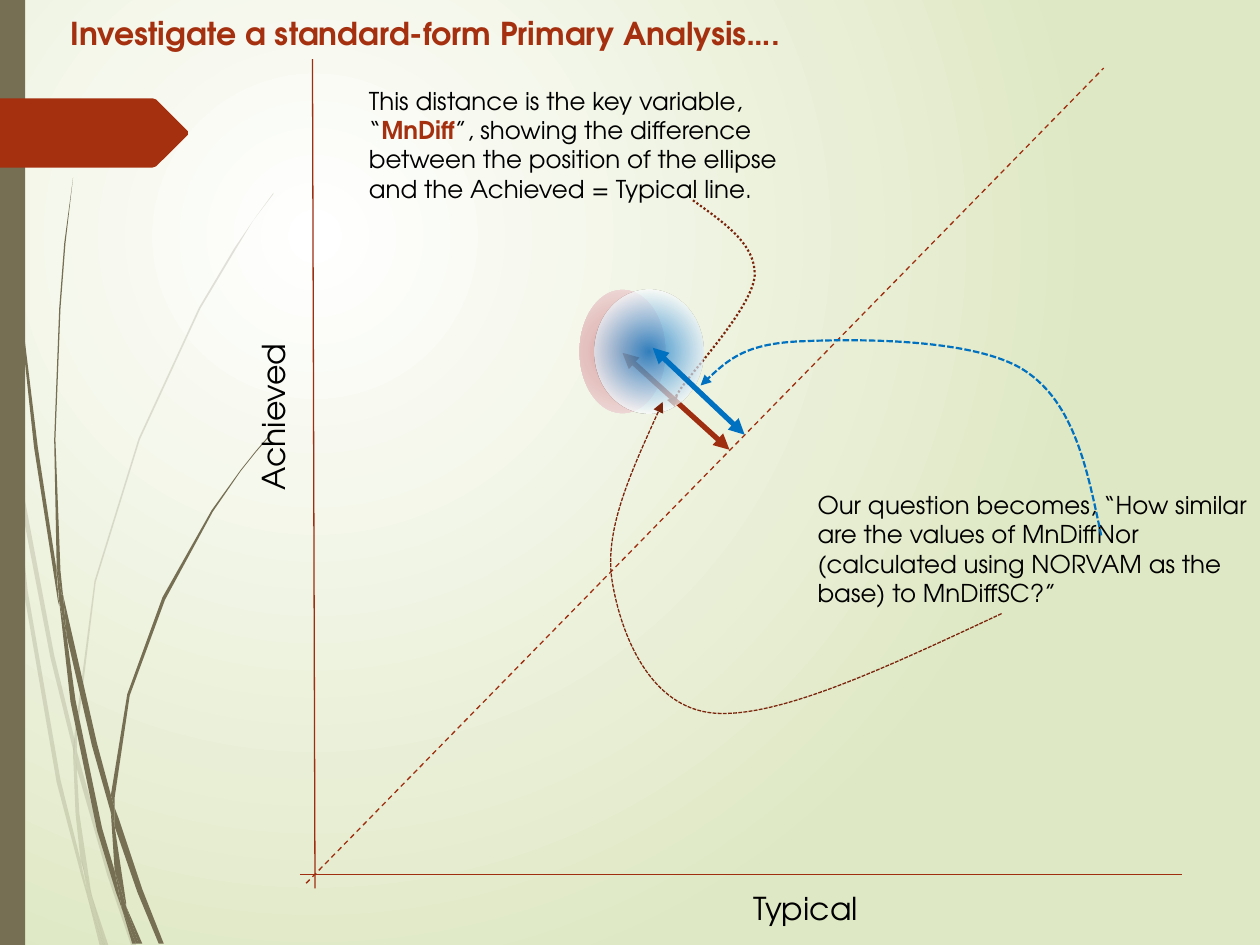
from dataclasses import dataclass

from lxml.etree import SubElement as Sub
from pptx import Presentation
from pptx.dml.color import RGBColor as RGB
from pptx.enum.dml import MSO_LINE as Dash
from pptx.enum.shapes import MSO_CONNECTOR as Link, MSO_SHAPE as Preset
from pptx.oxml.ns import qn
from pptx.util import Cm, Pt


@dataclass(frozen=True)
class Theme:
    font: str = "TeX Gyre Adventor"
    heading: int = 18
    note: int = 14
    ink: str = "000000"
    accent: str = "A53010"
    axis: str = "9E2E0F"
    pointer: str = "7A240C"
    blue: str = "0070C0"
    stem: str = "766F54"
    backdrop: tuple = ((0, "FFFFFF", 100), (100, "DFE8C4", 100))
    rose: tuple = ((0, "D69793", 100), (50, "E4C1BF", 100), (100, "F1E1E0", 100))
    sky: tuple = ((0, "0070C0", 78), (76, "FFFFFF", 70), (100, "FFFFFF", 57))


def inch(value):
    return Cm(value * 2.54)


def add_alpha(color, percent):
    if percent < 100:
        Sub(color, qn("a:alpha"), val=str(percent * 1000))


def radial(grad, stops, focus):
    grad.clear()
    stop_list = Sub(grad, qn("a:gsLst"))
    for position, rgb, opacity in stops:
        stop = Sub(stop_list, qn("a:gs"), pos=str(position * 1000))
        add_alpha(Sub(stop, qn("a:srgbClr"), val=rgb), opacity)
    circle = Sub(grad, qn("a:path"), {"path": "circle"})
    Sub(circle, qn("a:fillToRect"), {side: str(percent * 1000) for side, percent in zip("ltrb", focus)})


def bend(outline):
    corners = outline.findall(qn("a:lnTo"))
    for first in range(0, len(corners), 3):
        curve = Sub(outline, qn("a:cubicBezTo"))
        for corner in corners[first:first + 3]:
            curve.append(corner[0])
            outline.remove(corner)


class Sketch:
    def __init__(self, slide, theme):
        self.slide, self.theme = slide, theme

    def background(self, stops):
        self.slide.background.fill.gradient()
        radial(self.slide._element.xpath(".//p:bgPr/a:gradFill")[0], stops, (50, 50, 100, 100))

    def preset(self, kind, box):
        shape = self.slide.shapes.add_shape(kind, *map(inch, box))
        shape.shadow.inherit = False
        shape.line.fill.background()
        return shape

    def band(self, box):
        strip = self.preset(Preset.RECTANGLE, box)
        strip.fill.solid()
        strip.fill.fore_color.rgb = RGB.from_string(self.theme.stem)

    def ellipse(self, box, stops):
        oval = self.preset(Preset.OVAL, box)
        oval.fill.gradient()
        radial(oval._element.xpath("./p:spPr/a:gradFill")[0], stops, (50,) * 4)

    def outline(self, points, close):
        points = [(inch(x), inch(y)) for x, y in points]
        builder = self.slide.shapes.build_freeform(*points[0], scale=1.0)
        builder.add_line_segments(points[1:], close=close)
        shape = builder.convert_to_shape()
        shape.shadow.inherit = False
        return shape

    def patch(self, points, color, opacity=100):
        shape = self.outline(points, True)
        shape.line.fill.background()
        shape.fill.solid()
        shape.fill.fore_color.rgb = RGB.from_string(color)
        add_alpha(shape._element.xpath("./p:spPr/a:solidFill/a:srgbClr")[0], opacity)

    def stroke(self, shape, color, width, dash, ends):
        shape.line.color.rgb = RGB.from_string(color)
        shape.line.width = Pt(width)
        shape.line.dash_style = dash
        for end in ends:
            Sub(shape._element.xpath("./p:spPr/a:ln")[0], qn(f"a:{end}End"), type="triangle")

    def line(self, start, finish, color, width, dash=None, ends=()):
        ruler = self.slide.shapes.add_connector(Link.STRAIGHT, *map(inch, start + finish))
        self.stroke(ruler, color, width, dash, ends)
        Sub(ruler._element.spPr, qn("a:effectLst"))

    def curve(self, points, color, width, dash):
        swoop = self.outline(points, False)
        bend(swoop._element.xpath(".//a:path")[0])
        swoop.fill.background()
        self.stroke(swoop, color, width, dash, ("tail",))

    def text(self, box, runs, size, wrap=True, turn=0):
        label = self.slide.shapes.add_textbox(*map(inch, box))
        label.rotation = turn
        label.text_frame.word_wrap = wrap
        for words, color, bold in runs:
            run = label.text_frame.paragraphs[0].add_run()
            run.text = words
            run.font.name, run.font.size, run.font.bold = self.theme.font, Pt(size), bold
            run.font.color.rgb = RGB.from_string(color)


PALE_STEMS = (
    ((.08, 3.5), (.06, 3.22), (0, 2.82), (0, 2.99), (.07, 3.44)),
    ((.4, 5.22), (.59, 5.99), (.59, 5.86), (.43, 5.2), (.1, 3.45), (.12, 3.76)),
    ((.64, 6.07), (.61, 5.96), (.61, 6.1), (.85, 6.94), (1.04, 7.5), (1.08, 7.5), (.88, 6.92)),
    ((.83, 7.5), (.86, 7.5), (.73, 7.11)),
    ((.64, 6.83), (.48, 6.19), (.22, 4.69), (.12, 3.76), (.08, 3.5), (.19, 4.7), (.45, 6.21),
     (.64, 6.93), (.7, 7.14), (.69, 7.07)),
    ((.58, 5.99), (.6, 6.46), (.64, 6.83), (.67, 6.92), (.73, 7.11), (.72, 7.06), (.63, 6.46), (.61, 6.1), (.61, 6.08)),
    ((.61, 5.84), (.76, 4.62), (1.11, 3.49), (1.59, 2.45), (1.87, 1.98), (2.01, 1.75), (2.17, 1.54), (2.17, 1.53),
     (2.01, 1.75), (1.86, 1.97), (1.58, 2.44), (1.1, 3.48), (.75, 4.61), (.59, 5.84), (.59, 5.86), (.61, 5.96)),
    ((.7, 7.14), (.79, 7.5), (.82, 7.5)),
    ((.61, 6.08), (.61, 6.1), (.61, 5.96), (.59, 5.86), (.58, 5.99)),
    ((.67, 6.92), (.65, 6.83), (.69, 7.07), (.7, 7.14), (.82, 7.5), (.83, 7.5), (.73, 7.11)),
)
DARK_STEMS = (
    ((.05, 1.1), (.14, 2.33), (.27, 3.55), (.46, 4.77), (.47, 4.81), (.45, 4.57), (.45, 4.53),
     (.3, 3.55), (.15, 2.32), (.06, 1.09), (.04, .48), (.03, 0), (.02, 0), (.03, .48)),
    ((.73, 5.92), (.88, 6.45), (.88, 6.33), (.88, 6.31), (.77, 5.9), (.5, 4.72), (.53, 5.05)),
    ((.94, 6.49), (.91, 6.41), (.91, 6.56), (1.09, 7.08), (1.26, 7.49), (1.3, 7.49), (1.13, 7.06)),
    ((.91, 6.91), (.81, 6.57), (.6, 5.56), (.53, 5.05), (.47, 4.77), (.56, 5.57), (.77, 6.59),
     (.92, 7.08), (.97, 7.22), (.96, 7.17)),
    ((.5, 4.72), (.48, 4.53), (.44, 3.49), (.48, 2.45), (.52, 1.93), (.58, 1.41), (.51, 1.93),
     (.47, 2.45), (.43, 3.49), (.45, 4.49), (.49, 4.72)),
    ((1.1, 7.49), (1.13, 7.49), (1, 7.19)),
    ((.47, 4.77), (.53, 5.05), (.5, 4.72), (.49, 4.72), (.45, 4.49), (.45, 4.53)),
    ((.91, 6.33), (1.03, 5.52), (1.31, 4.76), (1.69, 4.06), (1.91, 3.74), (2.03, 3.59), (2.16, 3.44), (2.15, 3.44),
     (2.03, 3.58), (1.91, 3.73), (1.68, 4.05), (1.29, 4.74), (1.01, 5.51), (.88, 6.31), (.91, 6.41)),
    ((.97, 7.22), (1.05, 7.49), (1.08, 7.49)),
    ((.88, 6.45), (.91, 6.91), (.96, 7.06), (1, 7.19), (1, 7.16), (.91, 6.56), (.9, 6.51)),
    ((.88, 6.45), (.9, 6.51), (.91, 6.56), (.91, 6.41), (.88, 6.31), (.88, 6.33)),
    ((.96, 7.06), (.91, 6.91), (.96, 7.17), (.97, 7.22), (1.08, 7.49), (1.1, 7.49), (1, 7.19)),
)
TAB = ((1.49, 1.07), (1.24, 1.32), (1.21, 1.33), (0, 1.33), (0, .78), (1.21, .78), (1.24, .79), (1.49, 1.04))
NOTE_TO_GAP = ((5.5, 1.59), (5.75, 1.77), (6, 1.94), (5.99, 2.19), (5.97, 2.44), (5.5, 2.94),
               (5.4, 3.09), (5.3, 3.25), (5.34, 3.19), (5.38, 3.14))
QUESTION_TO_RED = ((7.95, 4.87), (7.07, 5.28), (6.19, 5.7), (5.67, 5.66), (5.16, 5.62), (4.93, 5.04),
                   (4.86, 4.62), (4.79, 4.21), (5.03, 3.7), (5.26, 3.19))
QUESTION_TO_BLUE = ((8.74, 4.25), (8.63, 3.73), (8.53, 3.2), (8.13, 2.94), (7.73, 2.68), (6.77, 2.69),
                    (6.34, 2.71), (5.91, 2.73), (5.74, 2.89), (5.56, 3.06))


def main():
    deck = Presentation()
    deck.slide_width, deck.slide_height = inch(10), inch(7.5)
    theme = Theme()
    sketch = Sketch(deck.slides.add_slide(deck.slide_layouts[6]), theme)
    sketch.background(theme.backdrop)
    for stems, opacity in ((PALE_STEMS, 20), (DARK_STEMS, 100)):
        for stem in stems:
            sketch.patch(stem, theme.stem, opacity)
    sketch.band((0, 0, .2, 7.5))
    sketch.patch(TAB, theme.accent)
    sketch.line((2.48, .47), (2.5, 7.05), theme.axis, .75)
    sketch.line((2.38, 6.94), (9.38, 6.94), theme.axis, .75)
    sketch.line((2.43, 7.01), (8.76, .54), theme.axis, .75, Dash.DASH)
    sketch.text((1.47, 3.09, 1.4, .4), [("Achieved", theme.ink, False)], theme.heading, False, 270)
    sketch.text((5.88, 7.01, 1.05, .4), [("Typical", theme.ink, False)], theme.heading, False)
    sketch.ellipse((4.6, 2.3, .68, .98), theme.rose)
    sketch.line((4.94, 2.8), (5.79, 3.57), theme.axis, 3, ends=("head", "tail"))
    title = "Investigate a standard-form Primary Analysis…."
    sketch.text((.46, .06, 6.14, .4), [(title, theme.accent, True)], theme.heading)
    sketch.curve(NOTE_TO_GAP, theme.pointer, 1.25, Dash.ROUND_DOT)
    sketch.text((2.83, .63, 3.77, 1.04), [
        ("This distance is the key variable, “", theme.ink, False), ("MnDiff", theme.accent, True),
        ("”, showing the difference between the position of the ellipse and the Achieved = Typical line.",
         theme.ink, False)], theme.note)
    sketch.ellipse((4.72, 2.3, .86, .98), theme.sky)
    sketch.line((5.18, 2.76), (5.91, 3.45), theme.blue, 3, ends=("head", "tail"))
    question = ("Our question becomes, “How similar are the values of MnDiffNor "
                "(calculated using NORVAM as the base) to MnDiffSC?”")
    sketch.text((6.39, 3.84, 3.77, 1.04), [(question, theme.ink, False)], theme.note)
    sketch.curve(QUESTION_TO_RED, theme.pointer, .75, Dash.SQUARE_DOT)
    sketch.curve(QUESTION_TO_BLUE, theme.blue, 1.25, Dash.SQUARE_DOT)
    deck.save("out.pptx")


if __name__ == "__main__":
    main()
